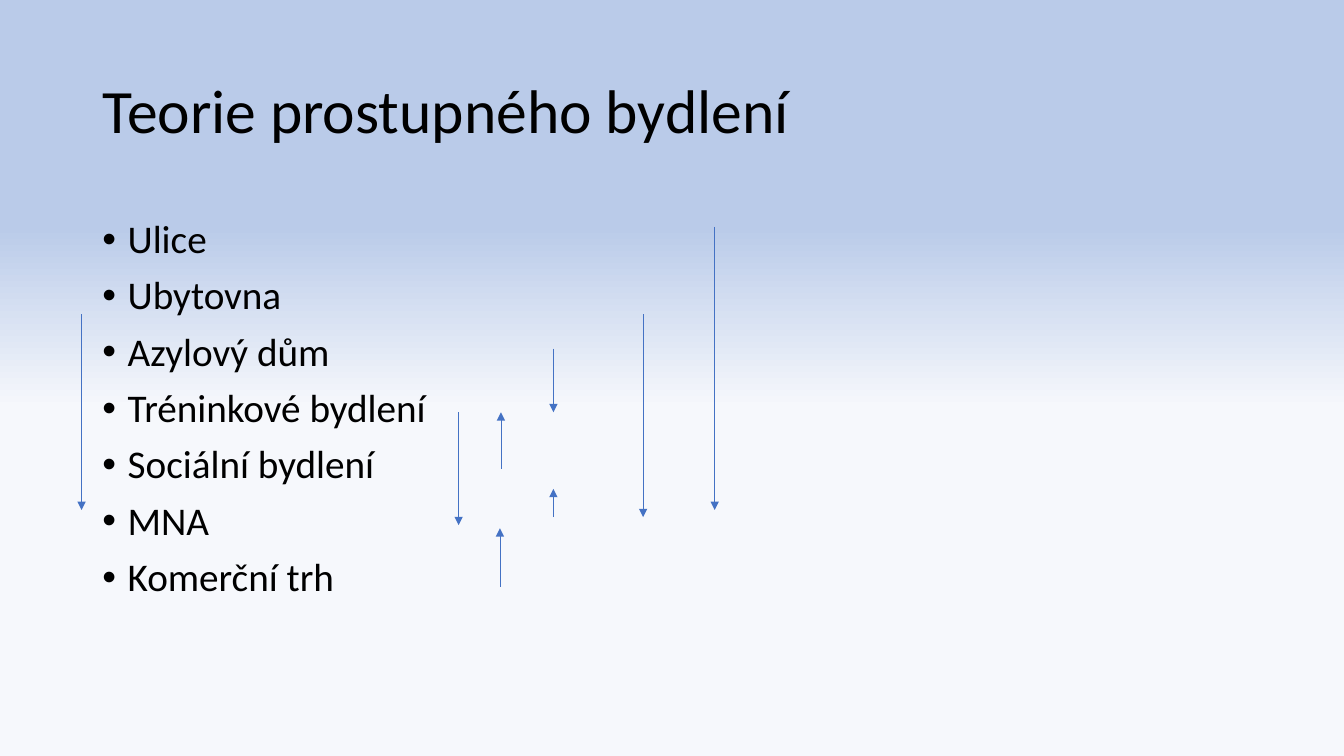
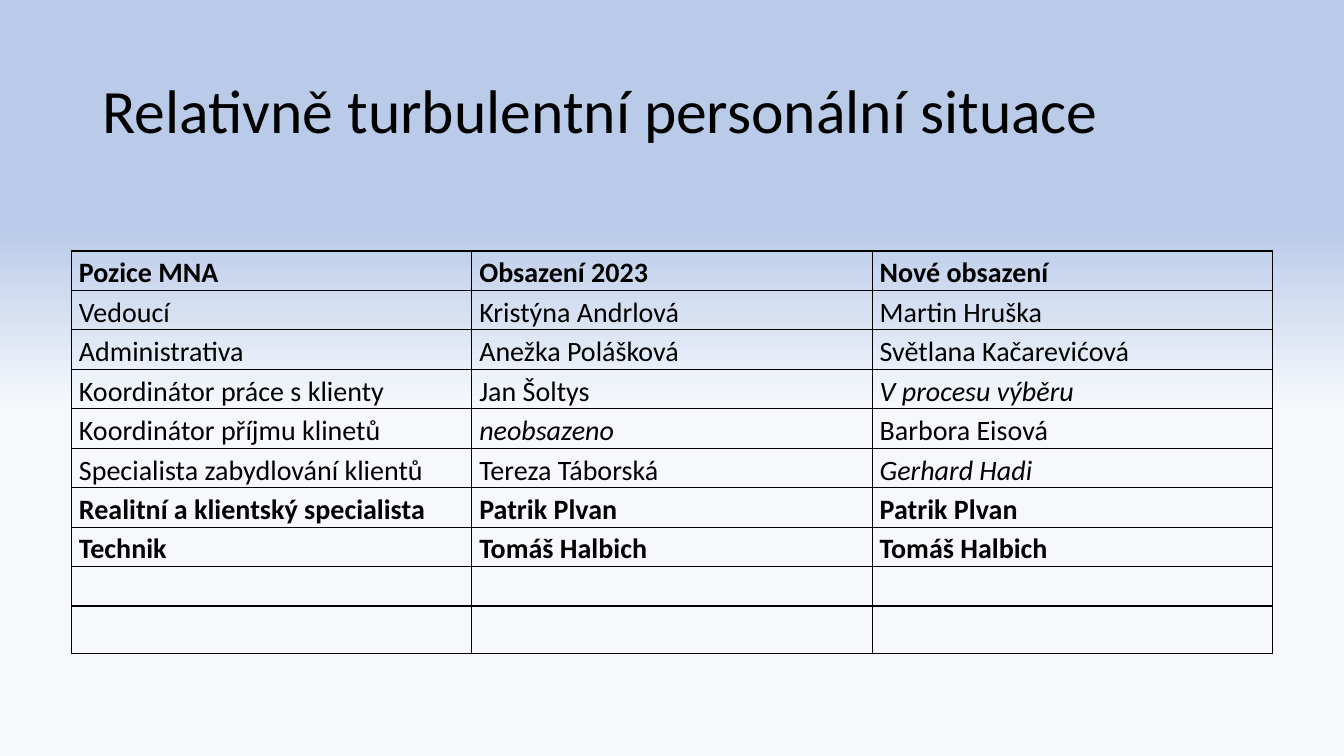
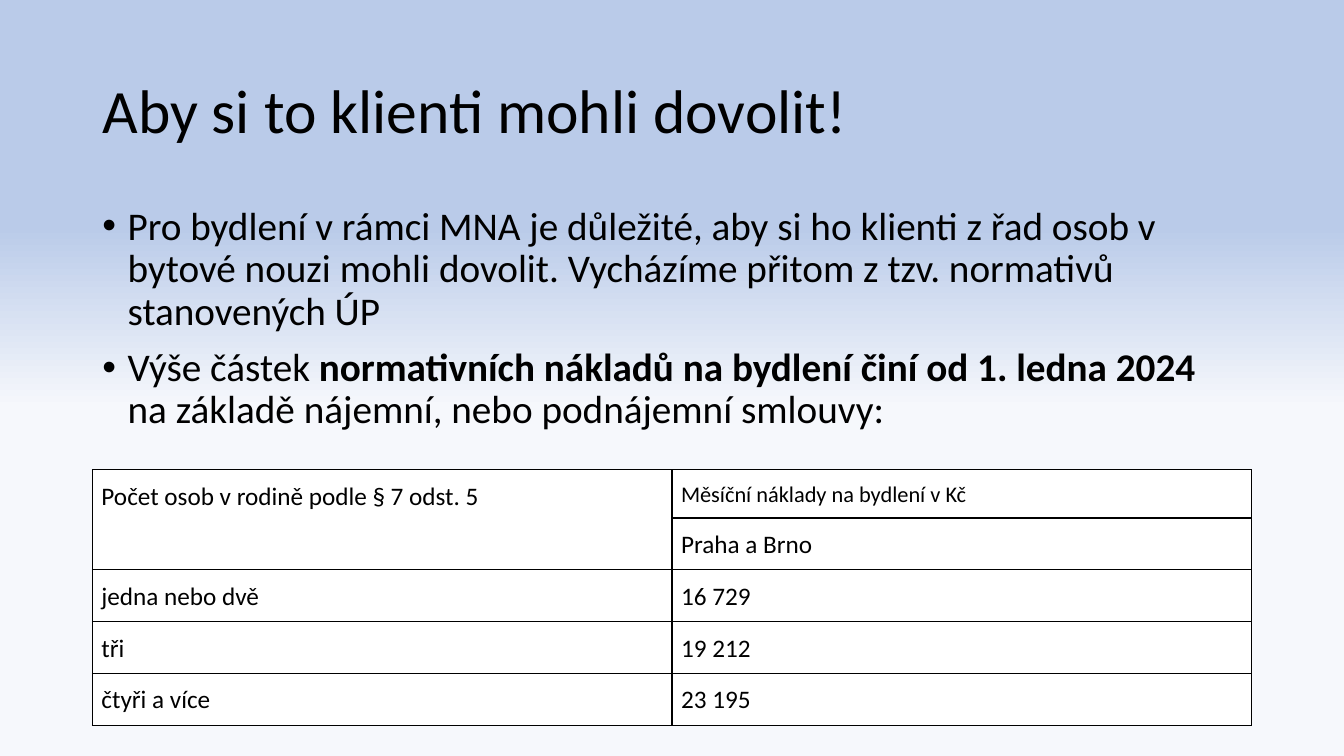
from lxml import etree
from pptx import Presentation
from pptx.dml.color import RGBColor
from pptx.enum import shapes, text
from pptx.oxml.ns import qn
from pptx.util import Pt

# Content
HEX = {"sky": "BACBE9", "pale": "F6F8FC", "ink": "000000",
       "arrow": "4472C4", "white": "FFFFFF"}
FONT = "Calibri"

STEPS = ["Ulice", "Ubytovna", "Azylový dům", "Tréninkové bydlení",
         "Sociální bydlení", "MNA", "Komerční trh"]
# x, start y, end y
ARROWS = [(58.3, 224.6, 364.3), (395.3, 369.4, 349.2), (327.6, 294.5, 375.1),
          (357.1, 419, 377.3), (357.8, 334.8, 294.5), (395.3, 249.1, 294.5),
          (459.4, 224.6, 369.4), (510.5, 162, 364.3)]

STAFF = [
    ("Pozice MNA", "Obsazení 2023", "Nové obsazení"),
    ("Vedoucí", "Kristýna Andrlová", "Martin Hruška"),
    ("Administrativa", "Anežka Polášková", "Světlana Kačarevićová"),
    ("Koordinátor práce s klienty", "Jan Šoltys", "V procesu výběru"),
    ("Koordinátor příjmu klinetů", "neobsazeno", "Barbora Eisová"),
    ("Specialista zabydlování klientů", "Tereza Táborská", "Gerhard Hadi"),
    ("Realitní a klientský specialista", "Patrik Plvan", "Patrik Plvan"),
    ("Technik", "Tomáš Halbich", "Tomáš Halbich"),
    ("", "", ""),
    ("", "", ""),
]
BOLD = {"Pozice MNA", "Obsazení 2023", "Nové obsazení", "Technik",
        "Realitní a klientský specialista", "Patrik Plvan", "Tomáš Halbich"}
ITALIC = {"V procesu výběru", "neobsazeno", "Gerhard Hadi"}

# A list is a paragraph of runs, every second one bold
NOTES = [
    ["Pro bydlení v rámci MNA je důležité, aby si ho klienti z řad osob "
     "v bytové nouzi mohli dovolit. Vycházíme přitom z tzv. normativů "
     "stanovených ÚP"],
    ["Výše částek ", "normativních nákladů na bydlení činí od 1. ledna 2024",
     " na základě nájemní, nebo podnájemní smlouvy:"],
]
COSTS = [
    ("Počet osob v rodině podle § 7 odst. 5", "Měsíční náklady na bydlení v Kč"),
    ("", "Praha a Brno"),
    ("jedna nebo dvě", "16 729"),
    ("tři", "19 212"),
    ("čtyři a více", "23 195"),
]


# Helpers
def rgb(name):
    return RGBColor.from_string(HEX[name])


def place(shape, x, y, w, h):
    shape.left, shape.top, shape.width, shape.height = map(Pt, (x, y, w, h))


def style(run, size, bold=False, italic=False):
    font = run.font
    font.name, font.size, font.bold, font.italic = FONT, Pt(size), bold, italic
    font.color.rgb = rgb("ink")


def add_slide(deck, layout, title):
    slide = deck.slides.add_slide(deck.slide_layouts[layout])
    frame = slide.shapes.title.text_frame
    frame.text = title
    frame.auto_size = text.MSO_AUTO_SIZE.NONE
    frame.vertical_anchor = text.MSO_ANCHOR.MIDDLE
    par = frame.paragraphs[0]
    par.alignment = text.PP_ALIGN.LEFT
    par.line_spacing = 0.9
    style(par.runs[0], 44)
    return slide


def fill_body(slide, items, top):
    body = slide.placeholders[1]
    place(body, 66, top, 828, 342.7)
    frame = body.text_frame
    frame.auto_size = text.MSO_AUTO_SIZE.NONE
    for i, item in enumerate(items):
        par = frame.add_paragraph() if i else frame.paragraphs[0]
        par.line_spacing, par.space_before = 0.9, Pt(10)
        props = par._p.get_or_add_pPr()
        props.set("marL", str(Pt(18)))
        props.set("indent", str(-Pt(18)))
        for n, part in enumerate(item):
            run = par.add_run()
            run.text = part
            style(run, 28, bold=n % 2 == 1)


def add_arrow(slide, x, y0, y1):
    line = slide.shapes.add_connector(
        shapes.MSO_CONNECTOR.STRAIGHT, Pt(x), Pt(y0), Pt(x), Pt(y1))
    line.line.color.rgb = rgb("arrow")
    line.line.width = Pt(0.5)
    etree.SubElement(line.line._get_or_add_ln(), qn("a:tailEnd"), type="triangle")
    etree.SubElement(line._element.spPr, qn("a:effectLst"))


def add_border(cell):
    props = cell._tc.get_or_add_tcPr()
    for side in ("lnL", "lnR", "lnT", "lnB"):
        edge = etree.SubElement(props, qn("a:" + side), w=str(Pt(1)))
        solid = etree.SubElement(edge, qn("a:solidFill"))
        etree.SubElement(solid, qn("a:srgbClr"), val=HEX["ink"])


def add_grid(slide, rows, box, highs, size, pad, gap, fill=None):
    """box is left, top, width; pad is side and top margin; gap is line spacing."""
    x, y, w = box
    cols = len(rows[0])
    grid = slide.shapes.add_table(
        len(rows), cols, Pt(x), Pt(y), Pt(w), Pt(sum(highs))).table
    grid.first_row = grid.horz_banding = False
    for col in grid.columns:
        col.width = Pt(w / cols)
    for r, (row, high) in enumerate(zip(rows, highs)):
        grid.rows[r].height = Pt(high)
        for c, words in enumerate(row):
            cell = grid.cell(r, c)
            cell.margin_left = cell.margin_right = Pt(pad[0])
            cell.margin_top = cell.margin_bottom = Pt(pad[1])
            add_border(cell)
            if fill:
                cell.fill.solid()
                cell.fill.fore_color.rgb = rgb(fill)
            else:
                cell.fill.background()
            if words:
                cell.text_frame.text = words
                par = cell.text_frame.paragraphs[0]
                par.alignment = text.PP_ALIGN.JUSTIFY
                par.line_spacing = gap
                style(par.runs[0], size, words in BOLD, words in ITALIC)
    return grid


def set_master(master):
    back = master.background.fill
    back.gradient()
    back.gradient_angle = 270
    for stop, name, pos in zip(back.gradient_stops, ("sky", "pale"), (0.3, 0.54)):
        stop.color.rgb = rgb(name)
        stop.position = pos
    place(master.placeholders[0], 66, 28.8, 828, 104.4)


def main():
    deck = Presentation()
    deck.slide_width, deck.slide_height = Pt(960), Pt(540)
    set_master(deck.slide_master)

    # Housing steps
    slide = add_slide(deck, 1, "Teorie prostupného bydlení")
    fill_body(slide, [[step] for step in STEPS], 153.3)
    for arrow in ARROWS:
        add_arrow(slide, *arrow)

    # Staff
    slide = add_slide(deck, 5, "Relativně turbulentní personální situace")
    add_grid(slide, STAFF, (51, 179.3, 858), [28.1] * 9 + [33.8],
             20, (5.4, 0), 1.15)

    # Housing costs
    slide = add_slide(deck, 1, "Aby si to klienti mohli dovolit!")
    fill_body(slide, NOTES, 144)
    grid = add_grid(slide, COSTS, (66, 335.6, 828), [34.4] + [37.1] * 4,
                    18, (6.5, 6.5), 1.07, "white")
    grid.cell(0, 0).merge(grid.cell(1, 0))
    grid.cell(0, 1).text_frame.paragraphs[0].runs[0].font.size = Pt(16)

    deck.save("out.pptx")


if __name__ == "__main__":
    main()
